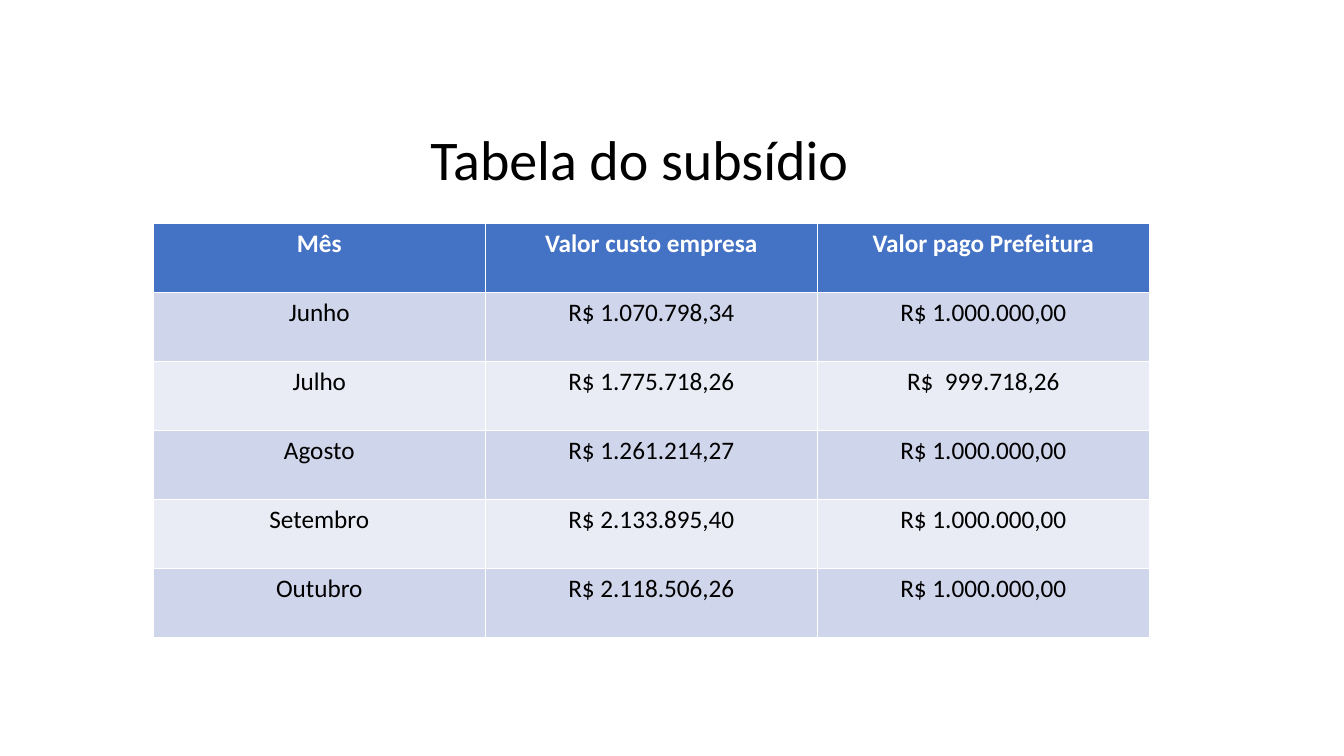
from dataclasses import dataclass

import pptx
import pptx.dml.color
import pptx.enum.text
import pptx.util

Inches = pptx.util.Inches
RGBColor = pptx.dml.color.RGBColor
Align = pptx.enum.text.PP_ALIGN

BLACK = RGBColor(0x00, 0x00, 0x00)
WHITE = RGBColor(0xFF, 0xFF, 0xFF)
HEADER_BLUE = RGBColor(0x44, 0x72, 0xC4)
BAND_DARK = RGBColor(0xCF, 0xD5, 0xEA)
BAND_LIGHT = RGBColor(0xE9, 0xEB, 0xF5)

TABLE_WIDTH = 9.88
TABLE_HEIGHT = 4.11


@dataclass(frozen=True)
class SubsidyRow:
    month: str
    company_cost: str
    city_payment: str

    def texts(self) -> tuple[str, str, str]:
        return self.month, self.company_cost, self.city_payment


HEADINGS = SubsidyRow("Mês", "Valor custo empresa", "Valor pago Prefeitura")
MONTHS = [
    SubsidyRow("Junho", "R$ 1.070.798,34", "R$ 1.000.000,00"),
    SubsidyRow("Julho", "R$ 1.775.718,26", "R$  999.718,26"),
    SubsidyRow("Agosto", "R$ 1.261.214,27", "R$ 1.000.000,00"),
    SubsidyRow("Setembro", "R$ 2.133.895,40", "R$ 1.000.000,00"),
    SubsidyRow("Outubro", "R$ 2.118.506,26", "R$ 1.000.000,00"),
]


def write_text(frame, text: str, size: int, color: RGBColor, bold: bool) -> None:
    frame.text = text
    paragraph = frame.paragraphs[0]
    paragraph.alignment = Align.CENTER
    font_format = {"name": "Calibri", "size": pptx.util.Pt(size), "bold": bold}
    for attribute, value in font_format.items():
        setattr(paragraph.runs[0].font, attribute, value)
    paragraph.runs[0].font.color.rgb = color


def add_heading(slide) -> None:
    heading = slide.shapes.title
    placement = {"left": 1.4, "top": 1.16, "width": TABLE_WIDTH, "height": 0.9}
    for attribute, value in placement.items():
        setattr(heading, attribute, Inches(value))
    heading.text_frame.vertical_anchor = pptx.enum.text.MSO_ANCHOR.MIDDLE
    write_text(heading.text_frame, "Tabela do subsídio", 40, BLACK, False)
    heading.text_frame.paragraphs[0].line_spacing = 0.9


def add_subsidy_table(slide) -> None:
    rows = [HEADINGS, *MONTHS]
    columns = len(HEADINGS.texts())
    subsidies = slide.shapes.add_table(
        len(rows), columns, Inches(1.52), Inches(2.22),
        Inches(TABLE_WIDTH), Inches(TABLE_HEIGHT),
    ).table
    for row_index, row in enumerate(rows):
        is_header = row_index == 0
        band = BAND_DARK if row_index % 2 else BAND_LIGHT
        for column_index, text in enumerate(row.texts()):
            cell = subsidies.cell(row_index, column_index)
            cell.fill.solid()
            cell.fill.fore_color.rgb = HEADER_BLUE if is_header else band
            write_text(cell.text_frame, text, 18, WHITE if is_header else BLACK, is_header)


def main() -> None:
    presentation = pptx.Presentation()
    presentation.slide_width = Inches(13.33)
    presentation.slide_height = Inches(7.5)
    slide = presentation.slides.add_slide(presentation.slide_layouts[5])
    add_heading(slide)
    add_subsidy_table(slide)
    presentation.save("out.pptx")


if __name__ == "__main__":
    main()
